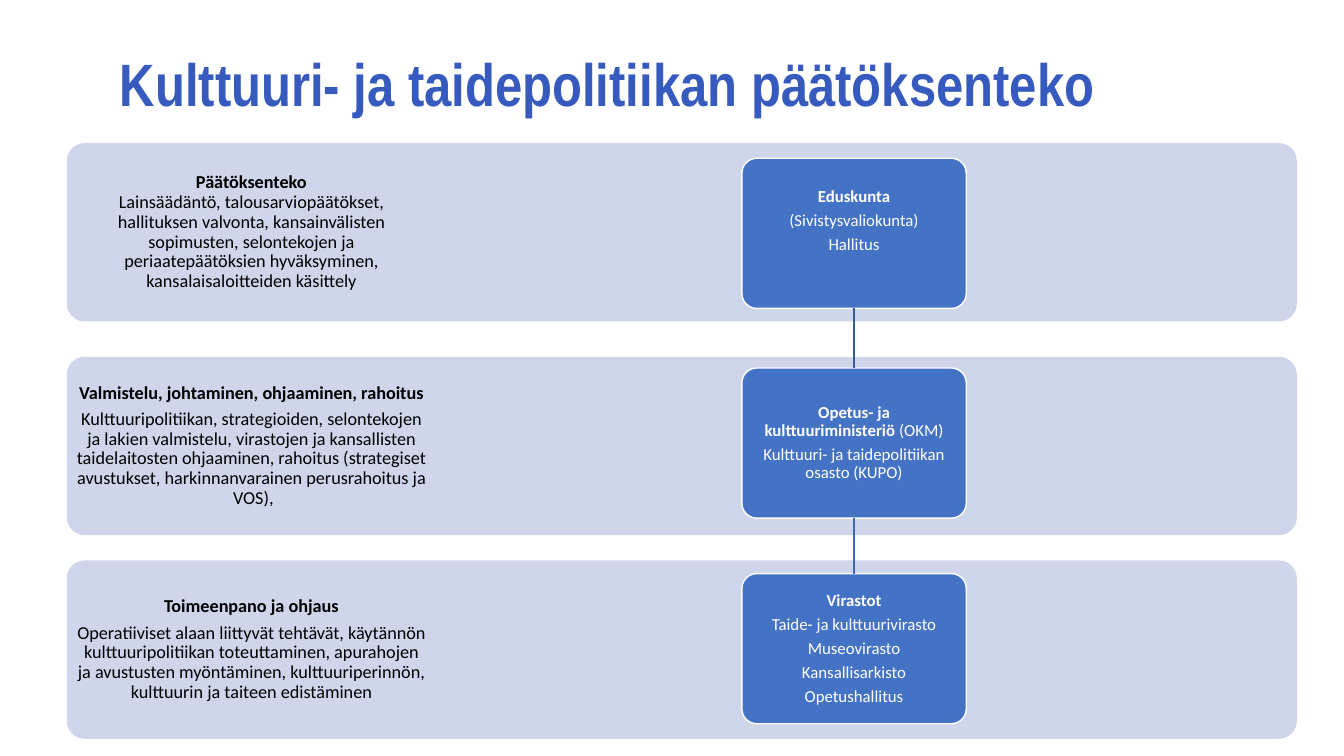
from copy import deepcopy
from dataclasses import dataclass

from lxml import etree
from pptx import Presentation
from pptx.dml.color import RGBColor
from pptx.enum.shapes import MSO_CONNECTOR, MSO_SHAPE
from pptx.enum.text import MSO_ANCHOR, PP_ALIGN
from pptx.oxml.ns import qn
from pptx.util import Inches, Pt

ROUNDED = MSO_SHAPE.ROUNDED_RECTANGLE
STRAIGHT = MSO_CONNECTOR.STRAIGHT
MIDDLE = MSO_ANCHOR.MIDDLE
CENTER = PP_ALIGN.CENTER
BOTTOM_SIDE, TOP_SIDE = 2, 0


@dataclass(frozen=True)
class Theme:
    title_font: str = "Arial Narrow"
    body_font: str = "Calibri"
    title_size: float = 42.7
    label_size: float = 13
    card_size: float = 12
    title: str = "365ABD"
    band: str = "CFD5EA"
    card: str = "4472C4"
    dark: str = "000000"
    light: str = "FFFFFF"
    links: tuple = ("365B9D", "3E67B2")
    line_spacing: float = 0.9
    paragraph_gap: float = 0.35


@dataclass(frozen=True)
class Box:
    """A rectangle in percent of the slide's width and height."""
    left: float
    top: float
    width: float
    height: float

    def emu(self):
        across, down = Inches(13.33) / 100, Inches(7.5) / 100
        return [round(value) for value in (self.left * across, self.top * down,
                                           self.width * across, self.height * down)]


@dataclass(frozen=True)
class Stage:
    band_top: float
    card_drop: float
    label: list
    card: list
    card_lift: float = 0


THEME = Theme()
TITLE_BOX = Box(6.9, 5.33, 76.67, 12.27)
BAND_LEFT, BAND_WIDTH, BAND_HEIGHT = 4.97, 91.52, 23.6
LABEL_SHARE = 0.3
CARD_OFFSET, CARD_WIDTH, CARD_HEIGHT = 50.23, 16.7, 19.87

# Each paragraph is a pair: its bold text and the regular text after it.
STAGES = [
    Stage(18.93, 2,
          [("Päätöksenteko",
            "\nLainsäädäntö, talousarviopäätökset,\nhallituksen valvonta, kansainvälisten "
            "sopimusten, selontekojen ja periaatepäätöksien hyväksyminen, "
            "kansalaisaloitteiden käsittely")],
          [("Eduskunta", ""), ("", "(Sivistysvaliokunta)"), ("", "Hallitus")],
          card_lift=0.24),
    Stage(47.2, 1.47,
          [("Valmistelu, johtaminen, ohjaaminen, rahoitus", ""),
           ("", "Kulttuuripolitiikan, strategioiden, selontekojen ja lakien valmistelu, "
                "virastojen ja kansallisten taidelaitosten ohjaaminen, rahoitus "
                "(strategiset avustukset, harkinnanvarainen perusrahoitus ja  VOS),")],
          [("Opetus- ja kulttuuriministeriö ", "(OKM)"),
           ("", "Kulttuuri- ja taidepolitiikan osasto (KUPO)")]),
    Stage(74.13, 1.74,
          [("Toimeenpano ja ohjaus", ""),
           ("", "Operatiiviset alaan liittyvät tehtävät, käytännön kulttuuripolitiikan "
                "toteuttaminen, apurahojen ja avustusten myöntäminen, kulttuuriperinnön, "
                "kulttuurin ja taiteen edistäminen")],
          [("Virastot", ""), ("", "Taide- ja kulttuurivirasto"), ("", "Museovirasto"),
           ("", "Kansallisarkisto"), ("", "Opetushallitus")]),
]


def add_runs(paragraph, text, bold, font_name, size, color):
    for index, line in enumerate(text.split("\n")):
        if index:
            paragraph.add_line_break()
        if line:
            run = paragraph.add_run()
            run.text = line
            run.font.name = font_name
            run.font.size = Pt(size)
            run.font.bold = bold
            run.font.color.rgb = RGBColor.from_string(color)


def fill_text(frame, paragraphs, font_name, size, color, gap=0):
    frame.word_wrap = True
    frame.vertical_anchor = MIDDLE
    for index, (strong, plain) in enumerate(paragraphs):
        paragraph = frame.add_paragraph() if index else frame.paragraphs[0]
        paragraph.alignment = CENTER
        paragraph.line_spacing = THEME.line_spacing
        paragraph.space_after = Pt(round(gap * size, 2))
        add_runs(paragraph, strong, True, font_name, size, color)
        add_runs(paragraph, plain, False, font_name, size, color)
        for line_break in paragraph._p.findall(qn("a:br")):
            line_break.append(deepcopy(paragraph.runs[0]._r.find(qn("a:rPr"))))


def set_insets(frame, inset, lift=0):
    frame.margin_left = frame.margin_right = frame.margin_top = Inches(inset)
    frame.margin_bottom = Inches(inset + lift)


def add_panel(slide, box, color):
    panel = slide.shapes.add_shape(ROUNDED, *box.emu())
    panel.adjustments[0] = 0.1
    panel.shadow.inherit = False
    panel.fill.solid()
    panel.fill.fore_color.rgb = RGBColor.from_string(color)
    panel.line.fill.background()
    return panel


def add_title(slide, box):
    frame = slide.shapes.add_textbox(*box.emu()).text_frame
    fill_text(frame, [("Kulttuuri- ja taidepolitiikan päätöksenteko", "")],
              THEME.title_font, THEME.title_size, THEME.title)


def add_stage(slide, box, stage):
    """Draw a band with its label and card, and return the card."""
    add_panel(slide, box, THEME.band)
    label_box = Box(box.left, box.top, box.width * LABEL_SHARE, box.height)
    label = slide.shapes.add_textbox(*label_box.emu()).text_frame
    set_insets(label, 0.1)
    fill_text(label, stage.label, THEME.body_font, THEME.label_size,
              THEME.dark, THEME.paragraph_gap)

    card_box = Box(box.left + CARD_OFFSET, box.top + stage.card_drop,
                   CARD_WIDTH, CARD_HEIGHT)
    card = add_panel(slide, card_box, THEME.card)
    card.line.color.rgb = RGBColor.from_string(THEME.light)
    card.line.width = Pt(1)
    set_insets(card.text_frame, 0.05, stage.card_lift)
    fill_text(card.text_frame, stage.card, THEME.body_font, THEME.card_size,
              THEME.light, THEME.paragraph_gap)
    return card


def link_cards(slide, upper, lower, color):
    link = slide.shapes.add_connector(STRAIGHT, 0, 0, 0, 0)
    link.begin_connect(upper, BOTTOM_SIDE)
    link.end_connect(lower, TOP_SIDE)
    link.line.color.rgb = RGBColor.from_string(color)
    link.line.width = Pt(1)
    etree.SubElement(link._element.spPr, qn("a:effectLst"))


def main():
    presentation = Presentation()
    presentation.slide_width = Inches(13.33)
    presentation.slide_height = Inches(7.5)
    slide = presentation.slides.add_slide(presentation.slide_layouts[6])
    add_title(slide, TITLE_BOX)
    cards = [add_stage(slide, Box(BAND_LEFT, stage.band_top, BAND_WIDTH, BAND_HEIGHT), stage)
             for stage in STAGES]
    for upper, lower, color in zip(cards, cards[1:], THEME.links):
        link_cards(slide, upper, lower, color)
    presentation.save("out.pptx")


if __name__ == "__main__":
    main()
